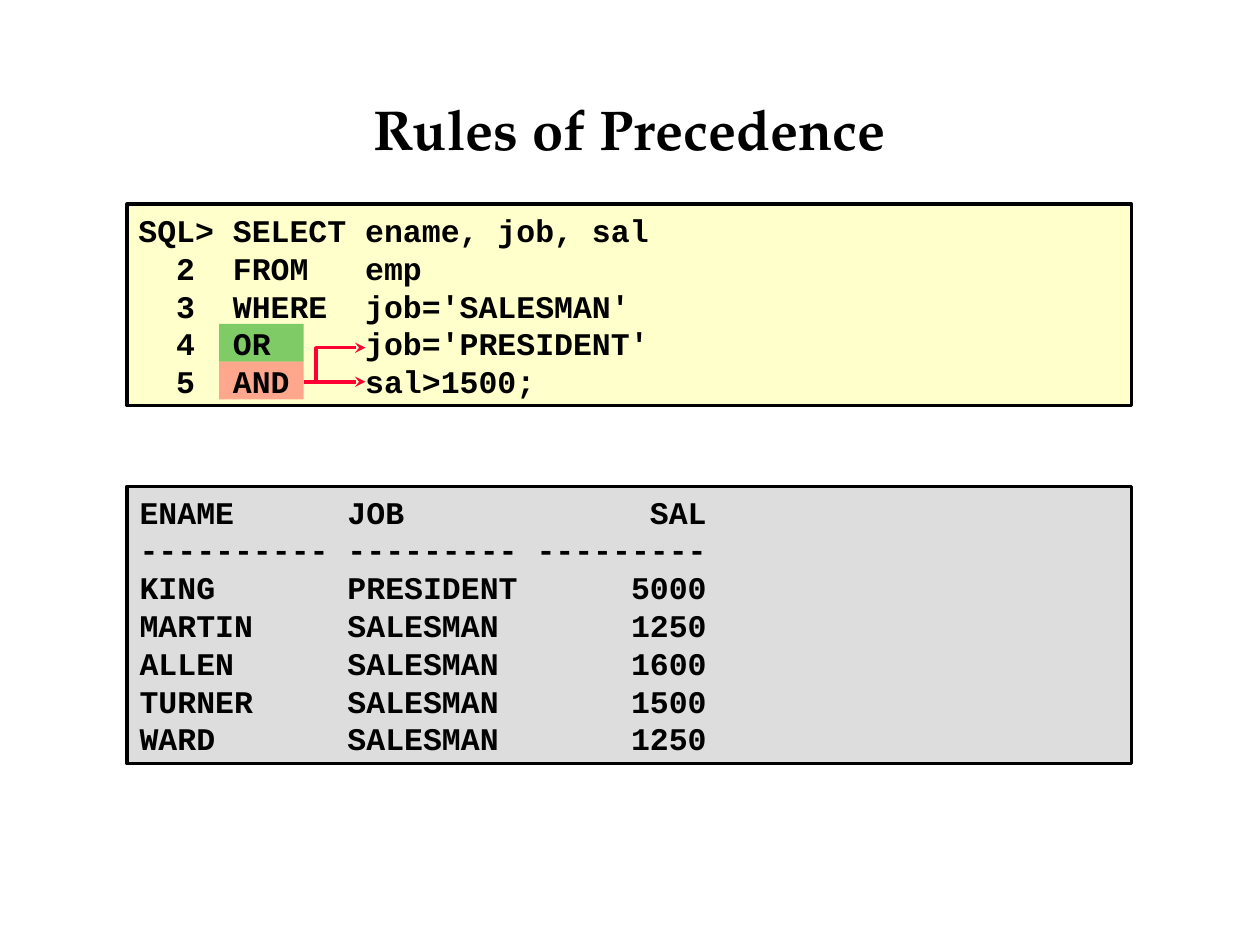
from dataclasses import dataclass
from lxml import etree
from pptx import Presentation
from pptx import util as u
from pptx.dml.color import RGBColor
from pptx.enum import shapes, text
from pptx.oxml.ns import qn

TITLE = "Rules of Precedence"
QUERY = [
    "SQL> SELECT ename, job, sal",
    "  2  FROM   emp",
    "  3  WHERE  job='SALESMAN'",
    "  4  OR     job='PRESIDENT'",
    "  5  AND    sal>1500;",
]
COLUMNS = [("ENAME", 10, "<"), ("JOB", 9, "<"), ("SAL", 9, ">")]
EMPLOYEES = [
    ("KING", "PRESIDENT", 5000),
    ("MARTIN", "SALESMAN", 1250),
    ("ALLEN", "SALESMAN", 1600),
    ("TURNER", "SALESMAN", 1500),
    ("WARD", "SALESMAN", 1250),
]


@dataclass(frozen=True)
class Theme:
    ink: str = "000000"
    query: str = "FFFFCC"
    result: str = "DDDDDD"
    or_mark: str = "009900"
    and_mark: str = "FF5050"
    arrow: str = "FF0033"
    title_font: str = "TeX Gyre Pagella"
    code_font: str = "Courier New"
    title_size: int = 32
    code_size: int = 18
    line: int = 2


T = Theme()


def rgb(value):
    return RGBColor.from_string(value)


def write(sp, lines, font=T.code_font, size=T.code_size,
          align=text.PP_ALIGN.LEFT, anchor=text.MSO_ANCHOR.MIDDLE):
    tf = sp.text_frame
    tf.word_wrap = True
    tf.auto_size = text.MSO_AUTO_SIZE.NONE
    tf.vertical_anchor = anchor
    for i, line in enumerate(lines):
        p = tf.add_paragraph() if i else tf.paragraphs[0]
        p.alignment = align
        p.space_before = u.Pt(0)
        r = p.add_run()
        r.text = line
        r.font.name, r.font.size, r.font.bold = font, u.Pt(size), True
        r.font.color.rgb = rgb(T.ink)


def box(s, area, fill, line=None, alpha=None):
    sp = s.shapes.add_shape(shapes.MSO_SHAPE.RECTANGLE, *map(u.Inches, area))
    sp.shadow.inherit = False
    sp.fill.solid()
    sp.fill.fore_color.rgb = rgb(fill)
    if line:
        sp.line.color.rgb = rgb(line)
        sp.line.width = u.Pt(T.line)
    else:
        sp.line.fill.background()
    if alpha:
        color = sp.fill._xPr.find(".//" + qn("a:srgbClr"))
        etree.SubElement(color, qn("a:alpha"), val=str(alpha * 1000))
    return sp


def arrow(sp):
    sp.line.color.rgb = rgb(T.arrow)
    sp.line.width = u.Pt(T.line)
    etree.SubElement(sp.line._get_or_add_ln(), qn("a:tailEnd"), type="stealth")
    etree.SubElement(sp._element.spPr, qn("a:effectLst"))


def result_lines():
    def row(values):
        return " ".join(f"{v:{side}{width}}" for v, (_, width, side) in zip(values, COLUMNS))

    rule = ["-" * width for _, width, _ in COLUMNS]
    return [row(v) for v in ([name for name, _, _ in COLUMNS], rule, *EMPLOYEES)]


def main():
    prs = Presentation()
    prs.slide_width, prs.slide_height = u.Inches(10), u.Inches(7.5)
    s = prs.slides.add_slide(prs.slide_layouts[5])

    title = s.shapes.title
    title.left, title.top, title.width, title.height = map(u.Inches, (1.01, 0.7, 7.98, 0.96))
    write(title, [TITLE], font=T.title_font, size=T.title_size,
          align=text.PP_ALIGN.CENTER, anchor=text.MSO_ANCHOR.TOP)

    left, width = 1.01, 7.97
    box(s, (left, 1.62, width, 1.6), T.query, T.ink)
    write(box(s, (left, 3.86, width, 2.2), T.result, T.ink), result_lines())

    mark_x, mark_y, mark_w, mark_h = 1.74, 2.57, 0.67, 0.3
    for i, color in enumerate((T.or_mark, T.and_mark)):
        box(s, (mark_x, mark_y + i * mark_h, mark_w, mark_h), color, alpha=50)

    start, bend, tip, or_y, and_y = map(u.Inches, (mark_x + mark_w, 2.51, 2.9, 2.76, 3.03))
    fb = s.shapes.build_freeform(bend, and_y)
    fb.add_line_segments([(bend, or_y), (tip, or_y)], close=False)
    branch = fb.convert_to_shape()
    branch.fill.background()
    arrow(branch)
    arrow(s.shapes.add_connector(shapes.MSO_CONNECTOR.STRAIGHT, start, and_y, tip, and_y))

    write(s.shapes.add_textbox(*map(u.Inches, (1, 1.61, 8, 1.63))), QUERY)
    prs.save("out.pptx")


if __name__ == "__main__":
    main()
